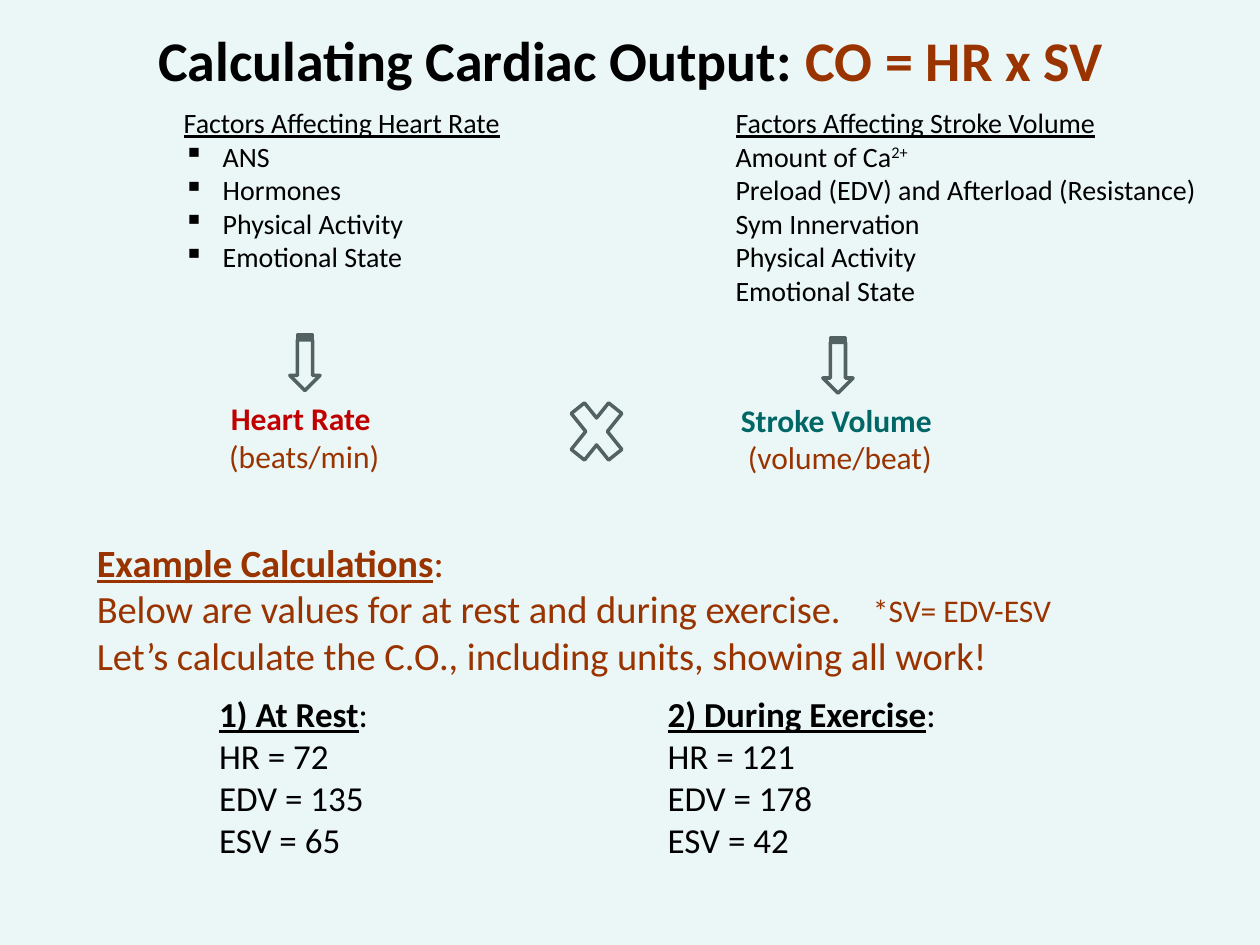
from lxml.etree import SubElement
from pptx import Presentation
from pptx.dml.color import RGBColor
from pptx.enum.shapes import MSO_SHAPE as Shape
from pptx.enum.text import MSO_ANCHOR as Anchor, PP_ALIGN as Align
from pptx.oxml.ns import qn
from pptx.util import Inches, Pt

WIDTH, HEIGHT = 10, 7.5
THEME = {
    "font": "Calibri",
    "back": "EBF6F7", "ink": "000000", "rust": "993300", "red": "C00000",
    "teal": "006666", "outline": "526263",
    "title": 32, "example": 22, "case": 20, "label": 18, "factor": 16,
    "line": 2,
}
BULLET, INDENT = "▪", 0.31

# Left edges and tops, as percent of the slide's width and height
LEFT = {"title": 7.8, "example": 6.7, "rate": 13.6, "volume": 57.4}
TOP = {"title": 2, "factors": 10.53, "labels": 41.6, "example": 56.4, "cases": 72.67}

# A line is a list of (text, format) spans
B, U, BU = {"bold": True}, {"underline": True}, {"bold": True, "underline": True}


def plain(*lines):
    return [[(line, {})] for line in lines]


def measure(name, symbol, unit):
    return [[(name, {**B, "color": symbol})], [(unit, {})]]


def case(name, rate, end_diastolic, end_systolic):
    return [[(name, BU), (":", {})]] + plain(
        f"HR = {rate}", f"EDV = {end_diastolic}", f"ESV = {end_systolic}")


# (left, top, width, height in percent), size, color, lines, options
TEXTS = [
    ((LEFT["title"], TOP["title"], 84.5, 8.53), "title", "ink",
     [[("Calculating Cardiac Output: ", B), ("CO = HR x SV", {**B, "color": "rust"})]],
     {"center": True}),
    ((LEFT["rate"], TOP["factors"], 31.4, 19.33), "factor", "ink",
     [[("Factors Affecting Heart Rate", U)]]
     + plain("ANS", "Hormones", "Physical Activity", "Emotional State"),
     {"bullets_from": 1}),
    ((LEFT["volume"], TOP["factors"], 39, 22.93), "factor", "ink",
     [[("Factors Affecting Stroke Volume", U)],
      [("Amount of Ca", {}), ("2+", {"raised": True})]]
     + plain("Preload (EDV) and Afterload (Resistance)", "Sym Innervation",
             "Physical Activity", "Emotional State"), {}),
    ((16.6, TOP["labels"], 15.1, 9.47), "label", "rust",
     measure("Heart Rate ", "red", "(beats/min)"), {"center": True}),
    ((LEFT["volume"], TOP["labels"] + 0.13, 18.5, 9.47), "label", "rust",
     measure("Stroke Volume ", "teal", "(volume/beat)"), {"center": True}),
    ((LEFT["example"], TOP["example"], 87.6, 16.13), "example", "rust",
     [[("Example Calculations", BU), (":", {})]]
     + plain("Below are values for at rest and during exercise.",
             "Let’s calculate the C.O., including units, showing all work!"), {}),
    ((68.3, 61.87, 17.6, 5.33), "label", "rust", plain("*SV= EDV-ESV"), {}),
    ((16.4, TOP["cases"], 23.4, 19.33), "case", "ink",
     case("1) At Rest", 72, 135, 65), {}),
    ((52, TOP["cases"], 23.4, 19.33), "case", "ink",
     case("2) During Exercise", 121, 178, 42), {}),
]

# Preset, (left, top, width, height in percent), rotation
SYMBOLS = [
    (Shape.STRIPED_RIGHT_ARROW, (22, 36.8, 4.4, 3.2), 90),
    (Shape.STRIPED_RIGHT_ARROW, (64.3, 37.07, 4.4, 3.2), 90),
    (Shape.MATH_MULTIPLY, (44.5, 40.93, 5.7, 9.47), 0),
]


def color(name):
    return RGBColor.from_string(THEME[name])


def place(area):
    return [Inches(share * side / 100) for share, side in zip(area, (WIDTH, HEIGHT) * 2)]


def add_bullet(para):
    properties = para._p.get_or_add_pPr()
    properties.set("marL", str(Inches(INDENT)))
    properties.set("indent", str(-Inches(INDENT)))
    SubElement(properties, qn("a:buChar")).set("char", BULLET)


def add_span(para, text, size, ink, look):
    span = para.add_run()
    span.text = text
    formats = {"name": THEME["font"], "size": Pt(THEME[size]),
               "bold": look.get("bold", False), "underline": look.get("underline", False)}
    for key, value in formats.items():
        setattr(span.font, key, value)
    span.font.color.rgb = color(look.get("color", ink))
    if look.get("raised"):
        span.font._element.set("baseline", "30000")


def add_text(page, area, size, ink, lines, options):
    frame = page.shapes.add_textbox(*place(area)).text_frame
    frame.word_wrap = True
    frame.vertical_anchor = Anchor.TOP
    for index, line in enumerate(lines):
        para = frame.add_paragraph() if index else frame.paragraphs[0]
        para.alignment = Align.CENTER if options.get("center") else Align.LEFT
        if index >= options.get("bullets_from", len(lines)):
            add_bullet(para)
        for text, look in line:
            add_span(para, text, size, ink, look)


def add_symbol(page, preset, area, rotation):
    symbol = page.shapes.add_shape(preset, *place(area))
    symbol.rotation = rotation
    symbol.shadow.inherit = False
    symbol.fill.background()
    symbol.line.color.rgb = color("outline")
    symbol.line.width = Pt(THEME["line"])


def main():
    deck = Presentation()
    deck.slide_width, deck.slide_height = Inches(WIDTH), Inches(HEIGHT)
    page = deck.slides.add_slide(deck.slide_layouts[6])
    page.background.fill.solid()
    page.background.fill.fore_color.rgb = color("back")
    for text in TEXTS:
        add_text(page, *text)
    for symbol in SYMBOLS:
        add_symbol(page, *symbol)
    deck.save("out.pptx")


if __name__ == "__main__":
    main()
